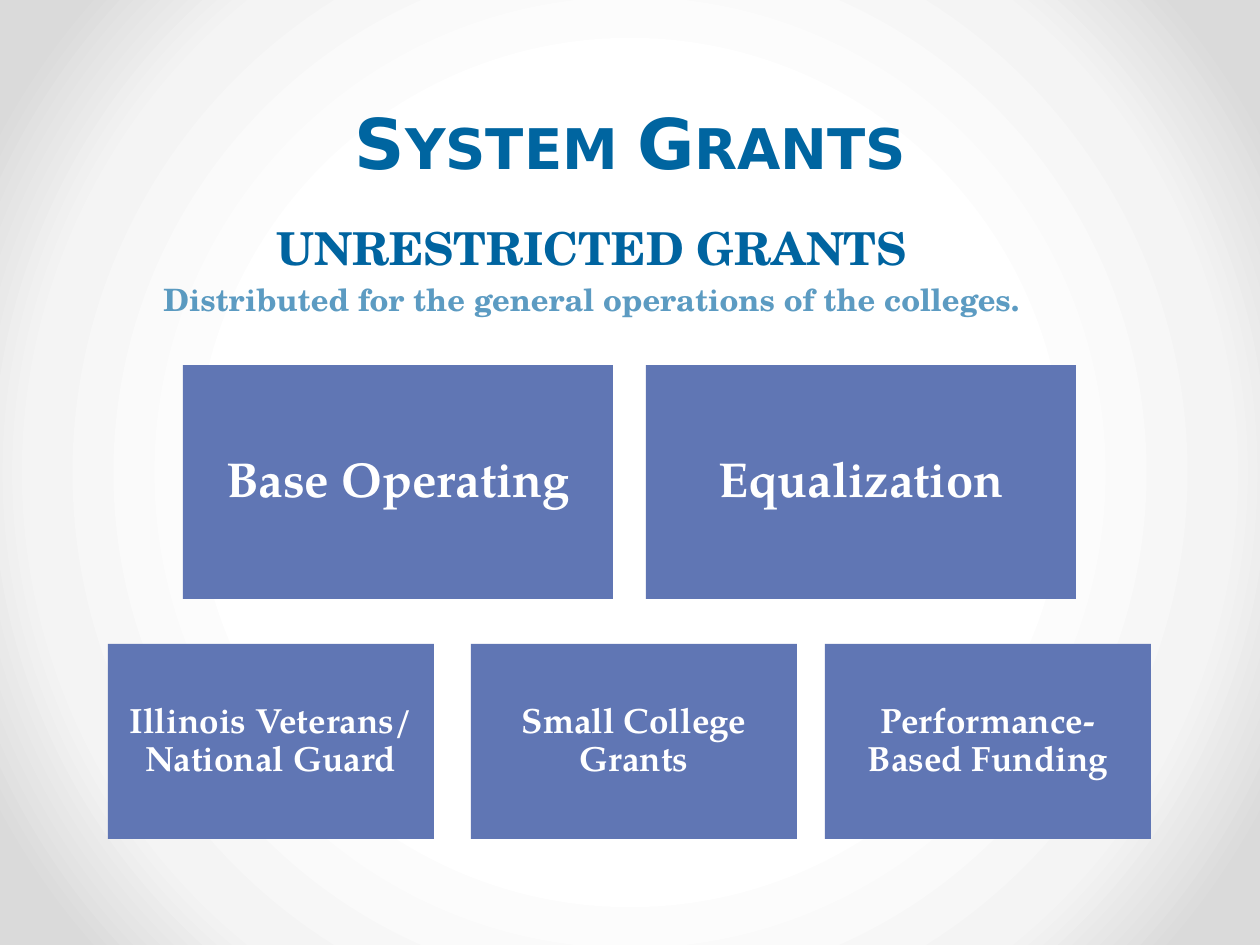
from dataclasses import dataclass

from pptx import Presentation
from pptx.dml.color import RGBColor
from pptx.enum.shapes import MSO_SHAPE
from pptx.enum.text import MSO_ANCHOR, MSO_AUTO_SIZE, PP_ALIGN
from pptx.oxml import parse_xml
from pptx.oxml.ns import nsdecls
from pptx.util import Emu, Pt

RECTANGLE = MSO_SHAPE.RECTANGLE
CENTER = PP_ALIGN.CENTER
MIDDLE, BOTTOM, TOP = MSO_ANCHOR.MIDDLE, MSO_ANCHOR.BOTTOM, MSO_ANCHOR.TOP
NO_AUTOFIT = MSO_AUTO_SIZE.NONE

EMU_PER_PX = 914400 / 126
COLORS = {
    "title": "0065A0",
    "body": "0064A0",
    "box": "6076B4",
    "box_text": "FFFFFF",
}
BACKGROUND_STOPS = {50: "FFFFFF", 76: "F4F4F4", 92: "DADADA"}


@dataclass
class TextStyle:
    font: str
    size: float
    color: str
    opacity: int = 100
    small_caps: bool = False


@dataclass
class GrantBox:
    text: str
    left: int
    inset: int


@dataclass
class BoxRow:
    top: int
    width: int
    height: int
    size: int
    boxes: list[GrantBox]


TITLE_STYLE = TextStyle("DejaVu Sans", 40, "title", small_caps=True)
BODY_LINES = [
    ("UNRESTRICTED GRANTS", TextStyle("TeX Gyre Schola", 25.9, "body")),
    ("Distributed for the general operations of the colleges.",
     TextStyle("TeX Gyre Schola", 17.6, "body", opacity=64)),
]
ROWS = [
    BoxRow(365, 430, 234, 28, [
        GrantBox("Base Operating", 183, 15),
        GrantBox("Equalization", 646, 15),
    ]),
    BoxRow(644, 326, 195, 20, [
        GrantBox("Illinois Veterans/ National Guard", 108, 15),
        GrantBox("Small College Grants", 471, 10),
        GrantBox("Performance-Based Funding", 825, 10),
    ]),
]


def px(length: int) -> Emu:
    return Emu(round(length * EMU_PER_PX))


def apply(target, **values) -> None:
    for name, value in values.items():
        setattr(target, name, value)


def place(shape, left: int, top: int, width: int, height: int) -> None:
    apply(shape, left=px(left), top=px(top), width=px(width), height=px(height))


def write(paragraph, text: str, style: TextStyle, **spacing) -> None:
    apply(paragraph, alignment=CENTER, **spacing)
    run = paragraph.add_run()
    run.text = text
    apply(run.font, name=style.font, size=Pt(style.size), bold=True)
    run.font.color.rgb = RGBColor.from_string(COLORS[style.color])
    properties = run.font._element
    if style.small_caps:
        properties.set("cap", "small")
    if style.opacity < 100:
        color = properties.find(".//{*}srgbClr")
        color.append(parse_xml(
            f'<a:alpha {nsdecls("a")} val="{style.opacity * 1000}"/>'))


def set_background(slide) -> None:
    stops = "".join(
        f'<a:gs pos="{position * 1000}"><a:srgbClr val="{color}"/></a:gs>'
        for position, color in BACKGROUND_STOPS.items())
    background = parse_xml(
        f'<p:bg {nsdecls("p", "a")}><p:bgPr><a:gradFill rotWithShape="1">'
        f'<a:gsLst>{stops}</a:gsLst><a:path path="circle">'
        '<a:fillToRect l="50000" t="50000" r="50000" b="50000"/></a:path>'
        '</a:gradFill><a:effectLst/></p:bgPr></p:bg>')
    slide._element.cSld.insert(0, background)


def fill_title(shape) -> None:
    place(shape, 64, 55, 1133, 135)
    frame = shape.text_frame
    apply(frame, auto_size=NO_AUTOFIT, vertical_anchor=BOTTOM, word_wrap=True)
    write(frame.paragraphs[0], "System Grants", TITLE_STYLE, line_spacing=Pt(58))


def fill_body(shape) -> None:
    place(shape, 25, 214, 1134, 110)
    frame = shape.text_frame
    apply(frame, auto_size=NO_AUTOFIT, vertical_anchor=TOP, word_wrap=True)
    for index, (text, style) in enumerate(BODY_LINES):
        paragraph = frame.add_paragraph() if index else frame.paragraphs[0]
        properties = paragraph._p.get_or_add_pPr()
        properties.set("marL", "0")
        properties.set("indent", "0")
        properties.append(parse_xml(f'<a:buNone {nsdecls("a")}/>'))
        space = Pt(style.size * 0.2) if index else Pt(0)
        write(paragraph, text, style, space_before=space)


def add_box(slide, row: BoxRow, box: GrantBox) -> None:
    shape = slide.shapes.add_shape(RECTANGLE, 0, 0, 0, 0)
    place(shape, box.left, row.top, row.width, row.height)
    shape.shadow.inherit = False
    shape.fill.solid()
    shape.fill.fore_color.rgb = RGBColor.from_string(COLORS["box"])
    shape.line.fill.background()
    frame = shape.text_frame
    apply(frame, vertical_anchor=MIDDLE, word_wrap=True)
    for side in ("left", "top", "right", "bottom"):
        setattr(frame, f"margin_{side}", px(box.inset))
    style = TextStyle("TeX Gyre Pagella", row.size, "box_text")
    write(frame.paragraphs[0], box.text, style, line_spacing=0.9)


def main() -> None:
    presentation = Presentation()
    apply(presentation, slide_width=px(1260), slide_height=px(945))
    slide = presentation.slides.add_slide(presentation.slide_layouts[1])
    set_background(slide)

    # Heading and introduction
    fill_title(slide.shapes.title)
    fill_body(slide.placeholders[1])

    # Grant boxes
    for row in ROWS:
        for box in row.boxes:
            add_box(slide, row, box)

    presentation.save("out.pptx")


if __name__ == "__main__":
    main()
